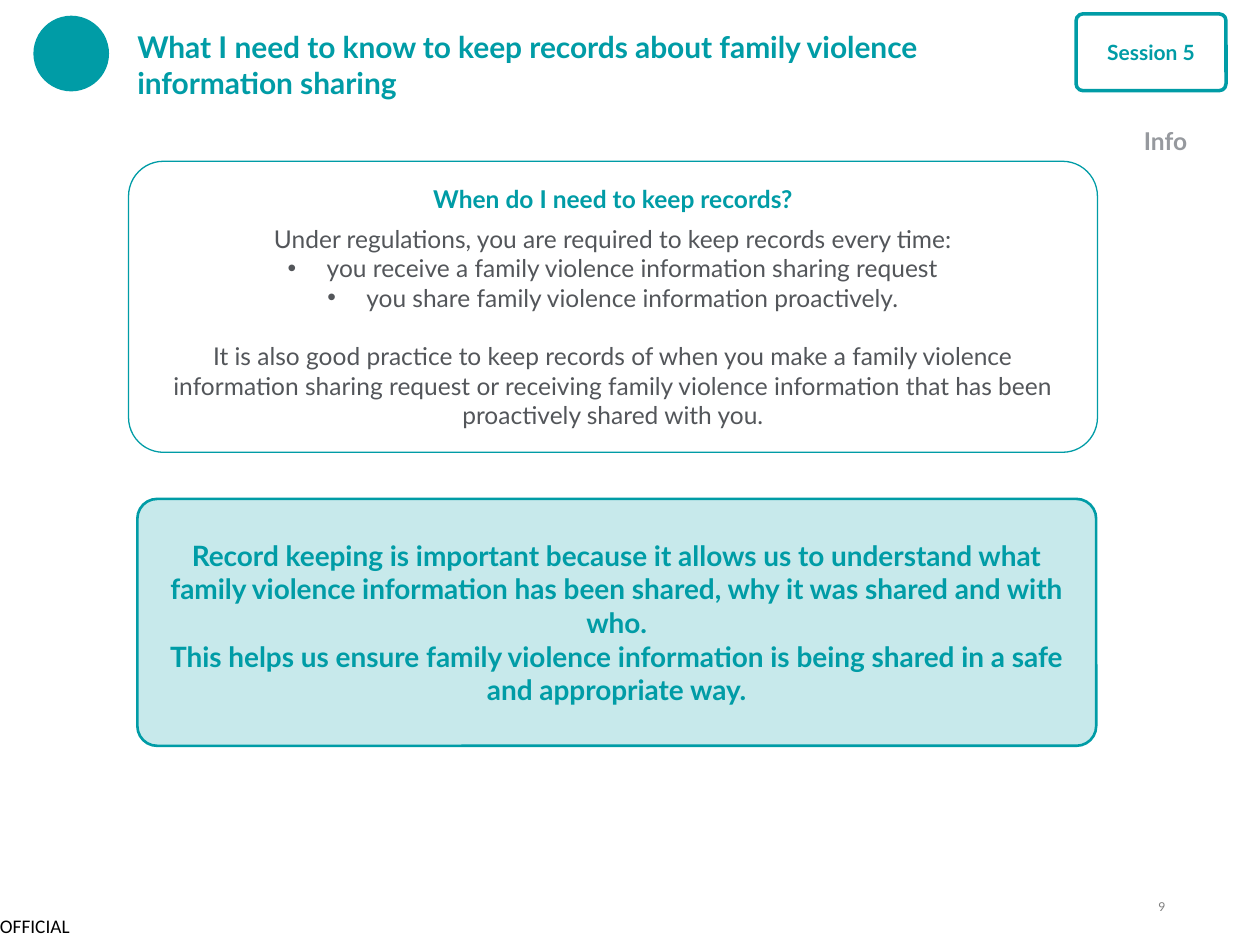
from lxml.etree import SubElement
from pptx import Presentation
from pptx.dml.color import RGBColor
from pptx.enum.shapes import MSO_SHAPE
from pptx.enum.text import MSO_ANCHOR, MSO_AUTO_SIZE, PP_ALIGN
from pptx.oxml.ns import qn
from pptx.util import Emu, Pt

TEAL = RGBColor(0x00, 0x9C, 0xA6)
DARK_GREY = RGBColor(0x53, 0x56, 0x5A)
MID_GREY = RGBColor(0x7F, 0x7F, 0x7F)
LIGHT_GREY = RGBColor(0x96, 0x99, 0x9E)
BLACK = RGBColor(0, 0, 0)
WHITE = RGBColor(255, 255, 255)
EMU_PER_PX = 9144


def px(length):
    return Emu(length * EMU_PER_PX)


def set_frame(shape, margins=(10, 5), anchor=MSO_ANCHOR.MIDDLE):
    frame = shape.text_frame
    frame.word_wrap = True
    frame.auto_size = MSO_AUTO_SIZE.NONE
    frame.vertical_anchor = anchor
    frame.margin_left = frame.margin_right = px(margins[0])
    frame.margin_top = frame.margin_bottom = px(margins[1])
    return frame


def write(para, text, size, color, bold=False, align=PP_ALIGN.LEFT, after=0, font="Lato"):
    para.text = text
    para.alignment = align
    para.space_before = Pt(0)
    para.space_after = Pt(after)
    for span in para.runs:
        span.font.name = font
        span.font.size = Pt(size)
        span.font.bold = bold
        span.font.color.rgb = color


def add_bullet(para, indent):
    properties = para._p.get_or_add_pPr()
    properties.set("marL", str(px(indent)))
    properties.set("indent", str(-px(indent)))
    SubElement(properties, qn("a:buFont"), typeface="Arial")
    SubElement(properties, qn("a:buChar"), char="•")


def add_outline(page, kind, box, line_width, fill=None, opacity=None, corner=None):
    shape = page.shapes.add_shape(kind, *map(px, box))
    shape.shadow.inherit = False
    shape.line.color.rgb = TEAL
    shape.line.width = Pt(line_width)
    if corner is not None:
        shape.adjustments[0] = corner
    if fill is None:
        shape.fill.background()
    else:
        shape.fill.solid()
        shape.fill.fore_color.rgb = fill
    if opacity is not None:
        color = shape.fill._xPr.find(qn("a:solidFill"))[0]
        SubElement(color, qn("a:alpha"), val=str(opacity * 1000))
    return shape


def add_label(page, box, text, size, color, margins=(0, 0), anchor=MSO_ANCHOR.TOP, **style):
    label = page.shapes.add_textbox(*map(px, box))
    write(set_frame(label, margins, anchor).paragraphs[0], text, size, color, **style)


def add_header(page, box):
    left, top, width, height = box
    add_outline(page, MSO_SHAPE.OVAL, (left, top + 2, 59, 59), 0.75, TEAL)
    title = page.shapes.title
    title.left, title.top, title.width, title.height = map(px, (left + 82, top + 8, 686, 65))
    write(set_frame(title, (0, 0)).paragraphs[0],
          "What I need to know to keep records about family violence information sharing",
          17.1, TEAL, bold=True, after=3.4)
    session = add_outline(page, MSO_SHAPE.ROUNDED_RECTANGLE,
                          (left + width - 119, top, 119, 61), 2, WHITE, corner=0.09)
    write(set_frame(session, (20, 5)).paragraphs[0], "Session 5", 12, TEAL,
          bold=True, align=PP_ALIGN.CENTER, after=6)
    add_label(page, (left + 871, top + 84, 90, 34), "Info", 14, LIGHT_GREY, (10, 5), bold=True)


def add_requirements(page, box):
    panel = add_outline(page, MSO_SHAPE.ROUNDED_RECTANGLE, box, 0.75, corner=0.12)
    frame = set_frame(panel)
    write(frame.paragraphs[0], "When do I need to keep records?", 14, TEAL,
          bold=True, align=PP_ALIGN.CENTER, after=6)
    body = [
        ("Under regulations, you are required to keep records every time:", False),
        ("you receive a family violence information sharing request", True),
        ("you share family violence information proactively.", True),
        ("It is also good practice to keep records of when you make a family violence "
         "information sharing request or receiving family violence information that has "
         "been proactively shared with you.", False),
    ]
    for text, bulleted in body:
        para = frame.add_paragraph()
        if bulleted:
            add_bullet(para, 31)
        write(para, text, 14, DARK_GREY, align=PP_ALIGN.CENTER)
    para.space_before = Pt(16.8)


def add_reason(page, box):
    panel = add_outline(page, MSO_SHAPE.ROUNDED_RECTANGLE, box, 1.5, TEAL, 22, 0.08)
    write(set_frame(panel).paragraphs[0],
          "Record keeping is important because it allows us to understand what family "
          "violence information has been shared, why it was shared and with who.\v"
          "This helps us ensure family violence information is being shared in a safe "
          "and appropriate way.", 16, TEAL, bold=True, align=PP_ALIGN.CENTER)


def add_footer(page, box):
    left, top, width, height = box
    add_label(page, (left, top + 5, 87, 31), "OFFICIAL", 11, BLACK,
              anchor=MSO_ANCHOR.MIDDLE, font="Calibri")
    add_label(page, (left + width - 34, top, 34, 20), "9", 7, MID_GREY, align=PP_ALIGN.RIGHT)


def main():
    deck = Presentation()
    deck.slide_width, deck.slide_height = px(1000), px(750)
    page = deck.slides.add_slide(deck.slide_layouts[5])
    add_header(page, (27, 11, 946, 118))
    add_requirements(page, (102, 128, 769, 231))
    add_reason(page, (109, 396, 761, 196))
    add_footer(page, (0, 714, 925, 36))
    deck.save("out.pptx")


if __name__ == "__main__":
    main()
